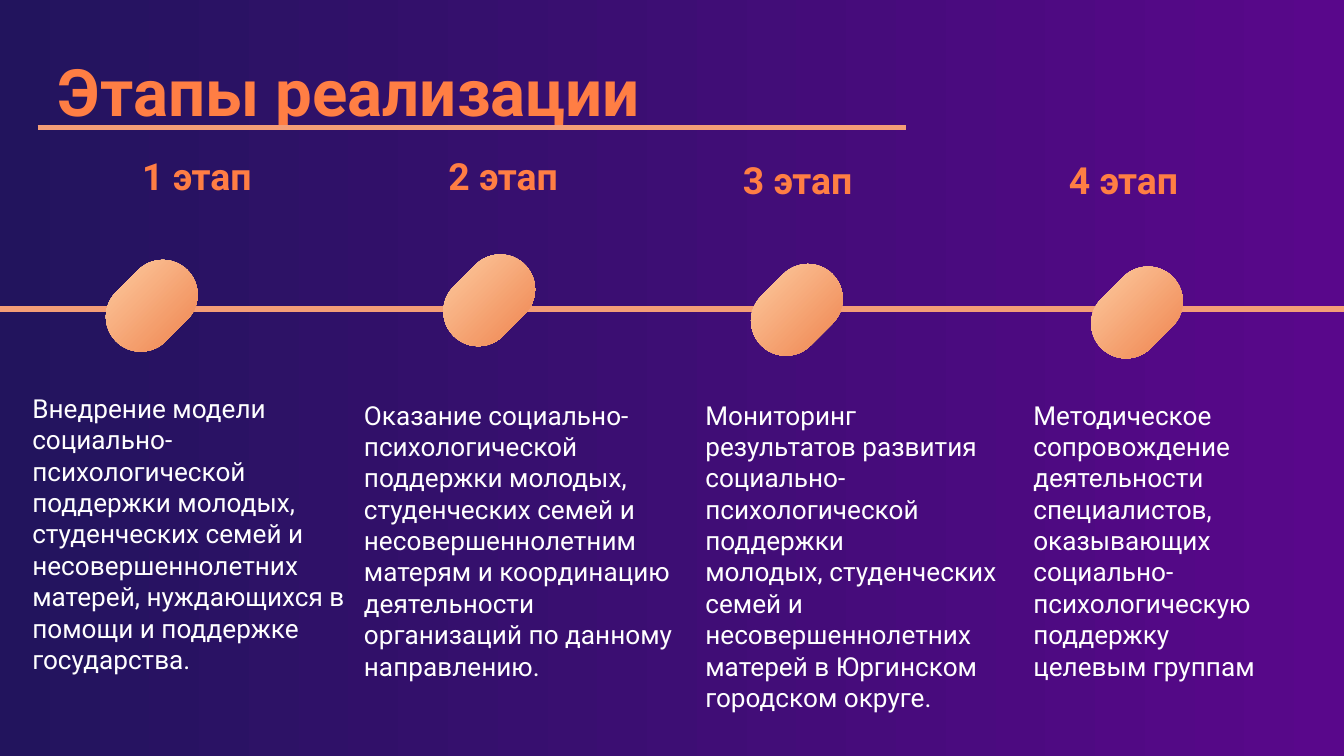
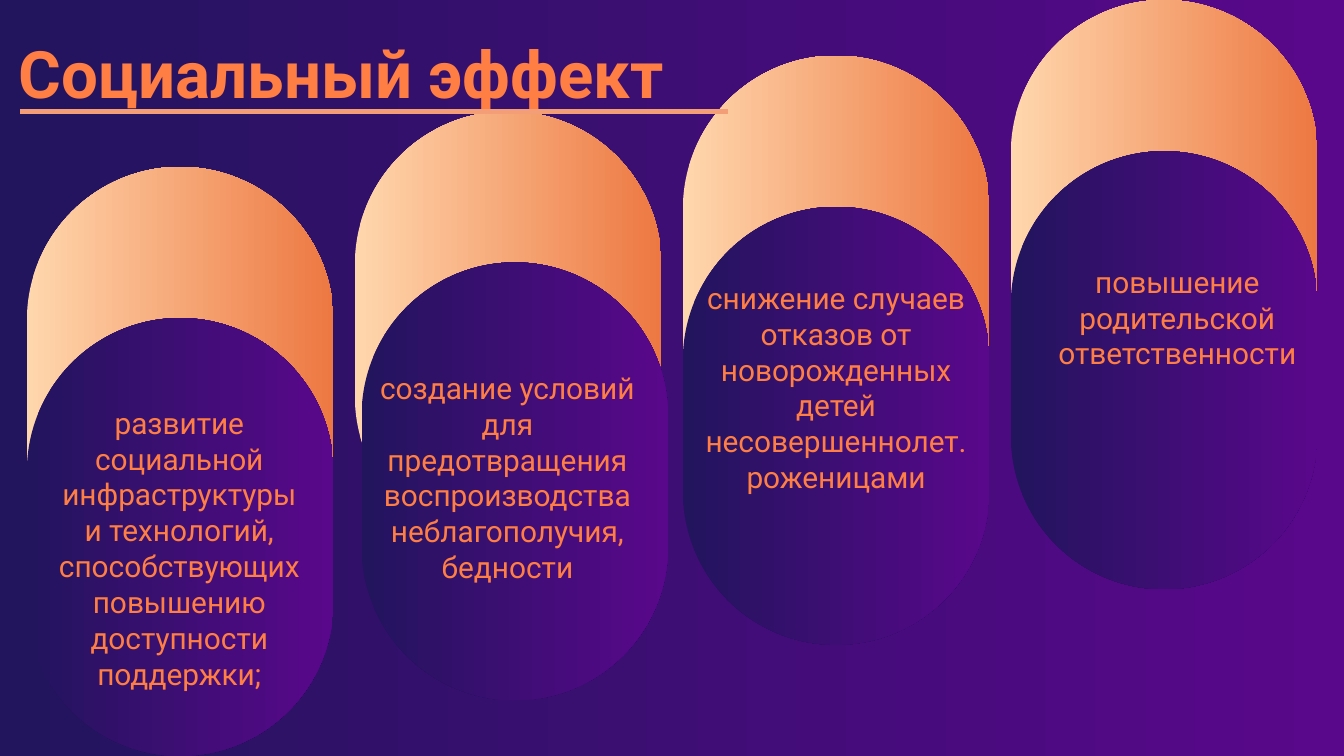
from dataclasses import dataclass

from lxml.etree import SubElement
from pptx import Presentation
from pptx.dml.color import RGBColor
from pptx.enum.shapes import MSO_CONNECTOR as Connector, MSO_SHAPE as Shape
from pptx.enum.text import MSO_AUTO_SIZE as AutoSize, PP_ALIGN as Align
from pptx.oxml.ns import qn
from pptx.util import Pt

FONT = "Roboto"
ORANGE = "FF7E44"
PEACH = "F49E77"
WHITE = "FFFFFF"
NIGHT = ("22145D", "59078B")
SUNSET = ("FFD7AD", "ED7842")
SLIDE_WIDTH, SLIDE_HEIGHT = 720, 405

PILL_SIZE = (37.4, 54)
ARCH_SIZE = (164.2, 234.7)
ARCH_LEFT, ARCH_PITCH = 14.4, 175.7
ARCH_RISE, ARCH_OVERLAP = 29.8, 81


@dataclass
class Stage:
    label_box: tuple
    pill_at: tuple
    body_box: tuple
    body: list
    inset: tuple = (7.2, 3.6)


STAGES = [
    Stage((49, 82, 113, 24.5), (62.6, 136.8), (17.3, 210.2, 169.2, 152.6),
          ["Внедрение модели социально-психологической поддержки молодых, "
           "студенческих семей и несовершеннолетних матерей, нуждающихся в "
           "помощи и поддержке государства."],
          inset=(0, 0)),
    Stage((213.1, 82, 113, 24.5), (243.4, 133.9), (187.9, 210.2, 191.5, 143.3),
          ["Оказание социально-психологической поддержки молодых, студенческих "
           "семей и несовершеннолетним матерям и координацию деятельности "
           "организаций по данному направлению."]),
    Stage((371.5, 84.2, 111.6, 24.5), (408.2, 139), (370.8, 210.2, 175, 159.8),
          ["Мониторинг результатов развития социально-психологической поддержки",
           "молодых, студенческих семей и",
           "несовершеннолетних матерей в Юргинском городском округе."]),
    Stage((546.5, 84.2, 110.9, 24.5), (590.4, 140.4), (546.5, 210.2, 154.8, 159.8),
          ["Методическое сопровождение деятельности специалистов, оказывающих "
           "социально-психологическую поддержку",
           "целевым группам"]),
]

# Text, its box, and the sideways shift of the dark arch
EFFECTS = [
    ("развитие социальной инфраструктуры и технологий, способствующих "
     "повышению доступности поддержки;", (30.2, 216.7, 131.8, 154.8), 0),
    ("создание условий для предотвращения воспроизводства неблагополучия, "
     "бедности", (200.2, 198, 143.3, 116.6), 3.6),
    ("снижение случаев отказов от новорожденных детей несовершеннолет. "
     "роженицами", (365.8, 149.8, 164.2, 116.6), 0),
    ("повышение родительской ответственности",
     (563.8, 141.1, 133.9, 58.3), 0),
]


def color(hex_string):
    return RGBColor.from_string(hex_string)


def paint_gradient(fill, colors):
    """Fill from left to right with two colours."""
    fill.gradient()
    fill.gradient_angle = 0
    for stop, hex_string in zip(fill.gradient_stops, colors):
        stop.color.rgb = color(hex_string)


def add_page(deck):
    page = deck.slides.add_slide(deck.slide_layouts[6])
    paint_gradient(page.background.fill, NIGHT)
    return page


def add_text(page, bounds, lines, size, hex_string=ORANGE, bold=False,
             align=Align.LEFT, spacing=None, inset=(0, 0)):
    box = page.shapes.add_textbox(*map(Pt, bounds))
    frame = box.text_frame
    frame.word_wrap = True
    frame.auto_size = AutoSize.SHAPE_TO_FIT_TEXT
    frame.margin_left = frame.margin_right = Pt(inset[0])
    frame.margin_top = frame.margin_bottom = Pt(inset[1])
    frame.text = "\n".join(lines)
    for paragraph in frame.paragraphs:
        paragraph.alignment = align
        paragraph.line_spacing = spacing
        font = paragraph.font
        font.name, font.size, font.bold = FONT, Pt(size), bold
        font.color.rgb = color(hex_string)


def add_rule(page, left, right, y):
    rule = page.shapes.add_connector(Connector.STRAIGHT, Pt(left), Pt(y), Pt(right), Pt(y))
    rule.line.color.rgb = color(PEACH)
    rule.line.width = Pt(3)
    SubElement(rule._element.spPr, qn("a:effectLst"))


def add_title(page, text, bounds, rule):
    add_text(page, bounds, [text], 35, bold=True, spacing=1.23)
    add_rule(page, *rule)


def add_capsule(page, position, size, colors, rotation=0):
    capsule = page.shapes.add_shape(Shape.ROUNDED_RECTANGLE, *map(Pt, position + size))
    capsule.adjustments[0] = 0.5
    capsule.rotation = rotation
    capsule.shadow.inherit = False
    capsule.line.fill.background()
    paint_gradient(capsule.fill, colors)


def build_stages(deck):
    page = add_page(deck)
    add_rule(page, -23, 743, 165.6)
    for number, stage in enumerate(STAGES, 1):
        add_text(page, stage.label_box, [f"{number} этап"], 20, bold=True, align=Align.CENTER)
        add_capsule(page, stage.pill_at, PILL_SIZE, SUNSET, rotation=45)
        add_text(page, stage.body_box, stage.body, 14, WHITE, inset=stage.inset)
    add_title(page, "Этапы реализации", (31, 18, 639.4, 51.8), (20.2, 485.3, 68.4))


def build_effects(deck):
    page = add_page(deck)
    for index, (text, bounds, shift) in enumerate(EFFECTS):
        left = ARCH_LEFT + index * ARCH_PITCH
        top = (len(EFFECTS) - 1 - index) * ARCH_RISE
        add_capsule(page, (left, top), ARCH_SIZE, SUNSET)
        add_capsule(page, (left + shift, top + ARCH_OVERLAP), ARCH_SIZE, NIGHT)
        add_text(page, bounds, [text], 16, align=Align.CENTER)
    add_title(page, "Социальный эффект", (10.1, 7.9, 617.8, 51.8), (10.8, 390.2, 59.8))


def main():
    deck = Presentation()
    deck.slide_width, deck.slide_height = Pt(SLIDE_WIDTH), Pt(SLIDE_HEIGHT)
    build_stages(deck)
    build_effects(deck)
    deck.save("out.pptx")


if __name__ == "__main__":
    main()
